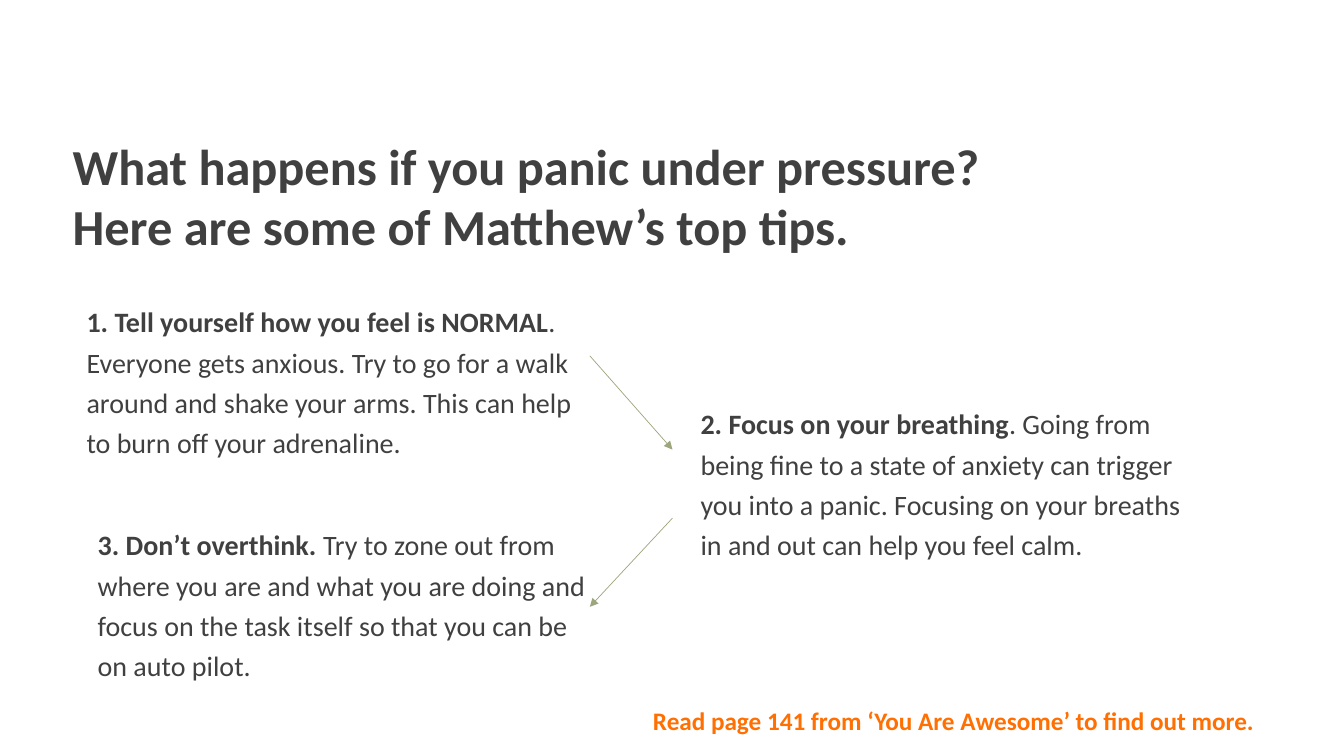
from dataclasses import dataclass

from lxml import etree
from pptx import Presentation
from pptx import util as u
from pptx.dml.color import RGBColor
from pptx.enum import shapes, text
from pptx.oxml import ns

SCALE = 9144


@dataclass(frozen=True)
class Theme:
    font: str = "Calibri"
    ink: str = "404040"
    accent: str = "FF6F01"
    arrow: str = "9DA57D"
    title_size: int = 36
    tip_size: int = 20
    footer_size: int = 18
    tip_spacing: float = 1.2
    arrow_width: float = 0.5


def px(length):
    return u.Emu(length * SCALE)


class TipsPage:
    """Draws the elements of one page in a shared theme."""

    def __init__(self, deck, theme):
        self.theme = theme
        self.page = deck.slides.add_slide(deck.slide_layouts[5])

    def place(self, box, area):
        box.left, box.top, box.width, box.height = map(px, area)
        frame = box.text_frame
        frame.word_wrap = True
        frame.auto_size = text.MSO_AUTO_SIZE.NONE
        frame.vertical_anchor = text.MSO_ANCHOR.TOP
        return frame

    def add_span(self, para, words, size, color, bold=True):
        span = para.add_run()
        span.text = words
        span.font.name = self.theme.font
        span.font.size = u.Pt(size)
        span.font.bold = bold
        span.font.color.rgb = RGBColor.from_string(color)

    def add_title(self, area, lines):
        frame = self.place(self.page.shapes.title, area)
        for index, line in enumerate(lines):
            para = frame.add_paragraph() if index else frame.paragraphs[0]
            para.alignment = text.PP_ALIGN.LEFT
            self.add_span(para, line, self.theme.title_size, self.theme.ink)

    def add_box(self, area):
        box = self.page.shapes.add_textbox(*map(px, area))
        return self.place(box, area).paragraphs[0]

    def add_tip(self, area, heading, advice):
        para = self.add_box(area)
        para.line_spacing = self.theme.tip_spacing
        self.add_span(para, heading, self.theme.tip_size, self.theme.ink)
        self.add_span(para, advice, self.theme.tip_size, self.theme.ink, bold=False)

    def add_footer(self, area, words):
        para = self.add_box(area)
        para.alignment = text.PP_ALIGN.RIGHT
        self.add_span(para, words, self.theme.footer_size, self.theme.accent)

    def add_arrow(self, start, end):
        arrow = self.page.shapes.add_connector(
            shapes.MSO_CONNECTOR.STRAIGHT, *map(px, start + end))
        arrow.line.color.rgb = RGBColor.from_string(self.theme.arrow)
        arrow.line.width = u.Pt(self.theme.arrow_width)
        properties = arrow.element.spPr
        outline = properties.find(ns.qn("a:ln"))
        etree.SubElement(outline, ns.qn("a:tailEnd"), type="triangle")
        etree.SubElement(properties, ns.qn("a:effectLst"))


def main():
    deck = Presentation()
    deck.slide_width, deck.slide_height = px(1333), px(750)
    page = TipsPage(deck, Theme())
    page.add_title((62, 129, 1083, 131), (
        "What happens if you panic under pressure?",
        "Here are some of Matthew’s top tips."))
    tips = (
        ((76, 291, 509, 169), "1. Tell yourself how you feel is NORMAL",
         ". Everyone gets anxious. Try to go for a walk around and shake your "
         "arms. This can help to burn off your adrenaline."),
        ((685, 392, 517, 169), "2. Focus on your breathing",
         ". Going from being fine to a state of anxiety can trigger you into a "
         "panic. Focusing on your breaths in and out can help you feel calm."),
        ((87, 512, 509, 169), "3. Don’t overthink. ",
         "Try to zone out from where you are and what you are doing and focus "
         "on the task itself so that you can be on auto pilot."))
    for area, heading, advice in tips:
        page.add_tip(area, heading, advice)
    page.add_footer((80, 695, 1174, 40),
                    "Read page 141 from ‘You Are Awesome’ to find out more.")
    page.add_arrow((585, 353), (667, 446))
    page.add_arrow((667, 514), (585, 602))
    deck.save("out.pptx")


if __name__ == "__main__":
    main()
